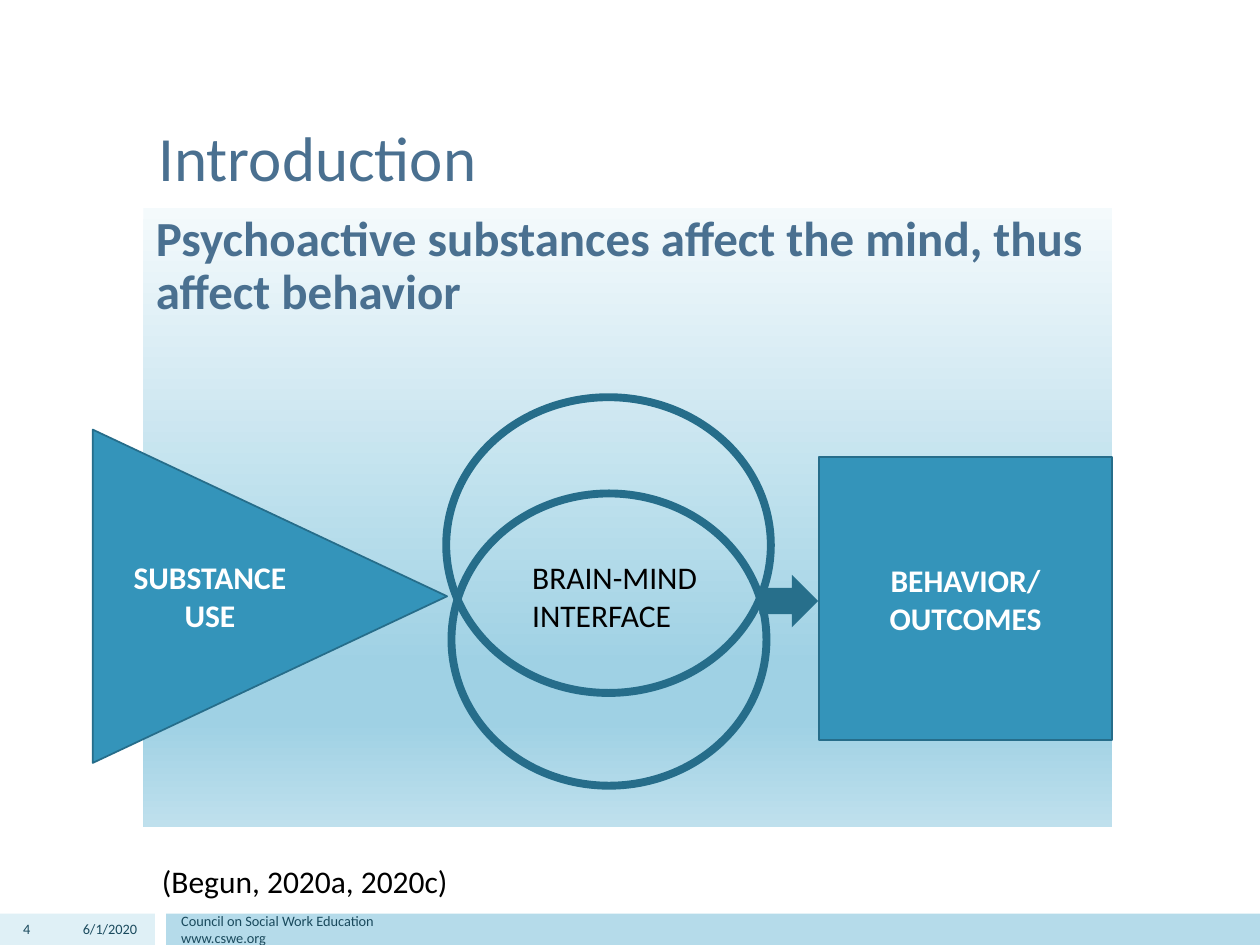
from lxml import etree
from pptx import Presentation
from pptx.dml.color import RGBColor
from pptx.enum.shapes import MSO_SHAPE
from pptx.enum.text import MSO_ANCHOR, PP_ALIGN
from pptx.oxml.ns import qn
from pptx.util import Pt

RECT = MSO_SHAPE.RECTANGLE
RING = MSO_SHAPE.FLOWCHART_CONNECTOR
CONE = MSO_SHAPE.FLOWCHART_EXTRACT
BLOCK = MSO_SHAPE.FLOWCHART_PROCESS
ARROW = MSO_SHAPE.RIGHT_ARROW
TOP, MID, BASE = MSO_ANCHOR.TOP, MSO_ANCHOR.MIDDLE, MSO_ANCHOR.BOTTOM
LEFT, MIDDLE, RIGHT = PP_ALIGN.LEFT, PP_ALIGN.CENTER, PP_ALIGN.RIGHT

SLATE, NAVY, TEAL, BLUE = "4A7090", "1A4A5D", "266D8A", "3494BA"
WHITE, BLACK = "FFFFFF", "000000"

deck = Presentation()
deck.slide_width, deck.slide_height = Pt(720), Pt(540)
slide = deck.slides.add_slide(deck.slide_layouts[6])
shapes = slide.shapes
color = RGBColor.from_string


def draw(kind, box, fill=None, line=None, width=1):
    shape = shapes.add_shape(kind, *map(Pt, box))
    shape.shadow.inherit = False
    if fill:
        shape.fill.solid()
        shape.fill.fore_color.rgb = color(fill)
    else:
        shape.fill.background()
    if line:
        shape.line.color.rgb = color(line)
        shape.line.width = Pt(width)
    else:
        shape.line.fill.background()
    return shape


def write(shape, lines, size, ink, bold=False, align=LEFT, anchor=TOP, wrap=True):
    frame = shape.text_frame
    frame.word_wrap = wrap
    frame.vertical_anchor = anchor
    for i, text in enumerate(lines):
        para = frame.paragraphs[0] if i == 0 else frame.add_paragraph()
        para.alignment = align
        run = para.add_run()
        run.text = text
        run.font.name = "Calibri"
        run.font.size = Pt(size)
        run.font.bold = bold
        run.font.color.rgb = color(ink)
    return frame


# Footer bands
draw(RECT, (0, 522, 88.5, 18), "DFF0F6")
draw(RECT, (95, 522, 625, 18), "B5DBEA")

# Title
title = shapes.add_textbox(Pt(83.5), Pt(21.5), Pt(553.5), Pt(93))
write(title, ["Introduction"], 36, SLATE, anchor=BASE)

# Gradient panel with the main statement
panel = draw(RECT, (82, 119, 553.5, 353.5))
panel.fill.gradient()
panel.fill.gradient_angle = 270
stops = panel.element.spPr.find(qn("a:gradFill")).find(qn("a:gsLst"))
for old in list(stops):
    stops.remove(old)
for place, tint in ((0, "F4FAFC"), (74, "9FD1E4"), (83, "9FD1E4"), (100, "BFE0ED")):
    stop = etree.SubElement(stops, qn("a:gs"), pos=str(place * 1000))
    etree.SubElement(stop, qn("a:srgbClr"), val=tint)
claim = "Psychoactive substances affect the mind, thus affect behavior"
frame = write(panel, [claim], 28, SLATE, bold=True)
frame.paragraphs[0].line_spacing = 0.9

# Footer text
for left, width, lines, align in (
    (0, 24.5, ["4"], RIGHT),
    (26.5, 59, ["6/1/2020"], RIGHT),
    (96.5, 540, ["Council on Social Work Education", "www.cswe.org"], LEFT),
):
    foot = shapes.add_textbox(Pt(left), Pt(522), Pt(width), Pt(18))
    write(foot, lines, 8.2, NAVY, align=align, anchor=MID)

# Citation
cite = shapes.add_textbox(Pt(85.5), Pt(489), Pt(180), Pt(29))
write(cite, ["(Begun, 2020a, 2020c)"], 18, BLACK, wrap=False)

# Overlapping rings
draw(RING, (258, 282, 180, 167), line=TEAL, width=4.5)
draw(RING, (255, 227, 185.5, 169), line=TEAL, width=4.5)

# Cause and result
cone = draw(CONE, (59, 239.5, 190.5, 202.5), BLUE, TEAL)
cone.rotation = 90
block = draw(BLOCK, (468, 261, 167.5, 162), BLUE, TEAL)
write(block, ["BEHAVIOR/", "OUTCOMES"], 18, WHITE, True, MIDDLE, MID)

# Labels over the rings and the cone
label = shapes.add_textbox(Pt(297), Pt(315.5), Pt(114.5), Pt(51))
write(label, ["BRAIN-MIND", "INTERFACE"], 18, BLACK, wrap=False)
label = shapes.add_textbox(Pt(60.5), Pt(315.5), Pt(119), Pt(51))
write(label, ["SUBSTANCE", "USE"], 18, WHITE, True, MIDDLE, wrap=False)

# Arrow to the result
draw(ARROW, (434, 328.5, 33.5, 30), "276F8B")

deck.save("out.pptx")
